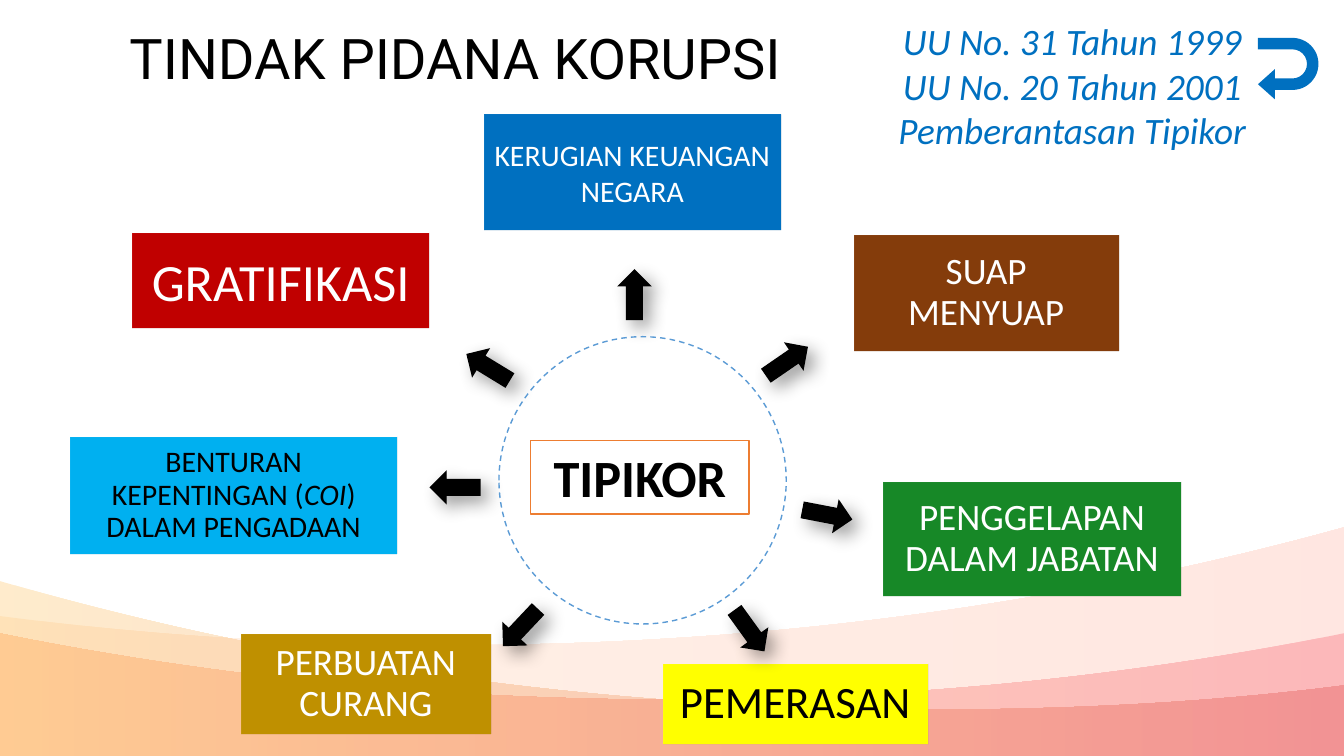
from lxml import etree
from pptx import Presentation
from pptx.dml.color import RGBColor
from pptx.enum.dml import MSO_LINE
from pptx.enum.shapes import MSO_SHAPE
from pptx.enum.text import MSO_ANCHOR, PP_ALIGN
from pptx.oxml.ns import qn
from pptx.util import Pt

BEVEL, UP_ARROW = MSO_SHAPE.BEVEL, MSO_SHAPE.UP_ARROW
OVAL, RECTANGLE, U_TURN = MSO_SHAPE.OVAL, MSO_SHAPE.RECTANGLE, MSO_SHAPE.U_TURN_ARROW
MIDDLE, TOP, CENTER = MSO_ANCHOR.MIDDLE, MSO_ANCHOR.TOP, PP_ALIGN.CENTER
DASH = MSO_LINE.DASH

BLACK = RGBColor(0x00, 0x00, 0x00)
WHITE = RGBColor(0xFF, 0xFF, 0xFF)
BLUE = RGBColor(0x00, 0x70, 0xC0)
RED = RGBColor(0xC0, 0x00, 0x00)
SKY = RGBColor(0x00, 0xB0, 0xF0)
GOLD = RGBColor(0xBF, 0x90, 0x00)
YELLOW = RGBColor(0xFF, 0xFF, 0x00)
GREEN = RGBColor(0x17, 0x88, 0x27)
BROWN = RGBColor(0x84, 0x3C, 0x0B)
ORANGE = RGBColor(0xED, 0x7D, 0x31)
RING_BLUE = RGBColor(0x5B, 0x9B, 0xD5)
PEACH, CORAL = RGBColor(0xFF, 0xC4, 0x86), RGBColor(0xFF, 0x86, 0x6B)
CRIMSON, FLAME = RGBColor(0xF2, 0x01, 0x22), RGBColor(0xFF, 0x6A, 0x00)
AMBER, SCARLET = RGBColor(0xFF, 0x9F, 0x00), RGBColor(0xCC, 0x00, 0x00)

WAVES = [
    ([(-1.4, 439.9), (103.7, 453.6), (212.4, 460.8), (323.3, 460.8),
      (550.1, 460.8), (766.1, 430.6), (960.5, 376.6)], PEACH, CORAL, 0),
    ([(-1.4, 452.2), (150.5, 483.1), (311.8, 499.7), (479.5, 499.7),
      (647.3, 499.7), (809.3, 483.1), (960.5, 452.2)], CRIMSON, FLAME, 180),
    ([(-1.4, 414.7), (200.9, 473.8), (426.2, 506.9), (664.6, 506.9),
      (765.4, 506.9), (864.7, 501.8), (960.5, 489.6)], AMBER, SCARLET, 0),
]

OFFENCES = [
    ((345.6, 81.8, 212.4, 82.6), ["KERUGIAN KEUANGAN NEGARA"], 21.33, BLUE, WHITE, 1, 5),
    ((94.3, 166.3, 212.4, 68), ["GRATIFIKASI"], 37.33, RED, WHITE, 1, 5),
    ((50.1, 312.1, 233.8, 83.5), ["BENTURAN KEPENTINGAN (", "COI", ") DALAM PENGADAAN"],
     21.33, SKY, BLACK, 0.9, 10),
    ((172.1, 452.9, 178.6, 71.3), ["PERBUATAN CURANG"], 26.67, GOLD, WHITE, 0.9, 10),
    ((473.4, 474.2, 189.4, 57.4), ["PEMERASAN"], 32, YELLOW, BLACK, 0.9, 10),
    ((630.7, 344.2, 213.1, 81.7), ["PENGGELAPAN DALAM JABATAN"], 26.67, GREEN, WHITE, 0.9, 10),
    ((609.8, 167.8, 189.4, 82.8), ["SUAP MENYUAP"], 26.67, BROWN, WHITE, 0.9, 10),
]

ARROWS = [
    (-5.8, -132.5, 0), (103, -85, 55.5), (131.8, 24.5, 100.9), (76.3, 107.3, 144.2),
    (-87.1, 105.1, 223.3), (-133.9, 5, 270), (-110.2, -80.7, 301.4),
]


def add_figure(slide, preset, box, fill=None, line=None):
    """Add a flat preset shape with an optional fill and a one-point line."""
    figure = slide.shapes.add_shape(preset, *[Pt(length) for length in box])
    figure.shadow.inherit = False
    if fill is None:
        figure.fill.background()
    else:
        figure.fill.solid()
        figure.fill.fore_color.rgb = fill
    if line is None:
        figure.line.fill.background()
    else:
        figure.line.color.rgb = line
        figure.line.width = Pt(1)
    return figure


def write_text(holder, lines, size, color, font="Calibri", spacing=1,
               anchor=TOP, inset=7.2, bold=False, italic=False):
    """Write centred lines, each a list of runs whose odd members are italic."""
    frame = holder.text_frame
    frame.word_wrap = True
    frame.vertical_anchor = anchor
    frame.margin_left = frame.margin_right = Pt(inset)
    for index, pieces in enumerate(lines):
        paragraph = frame.paragraphs[0] if index == 0 else frame.add_paragraph()
        paragraph.alignment = CENTER
        paragraph.line_spacing = spacing
        for order, piece in enumerate(pieces):
            run = paragraph.add_run()
            run.text = piece
            run.font.name = font
            run.font.size = Pt(size)
            run.font.color.rgb = color
            run.font.bold = bold
            run.font.italic = italic or order % 2 == 1


def curve_crest(wave):
    """Turn the six crest segments of a wave into two cubic curves."""
    segments = list(wave._element.iter(qn("a:lnTo")))[:6]
    for first, second, third in (segments[:3], segments[3:]):
        first.tag = qn("a:cubicBezTo")
        for segment in (second, third):
            first.append(segment[0])
            segment.getparent().remove(segment)


def add_waves(slide, box):
    """Draw the translucent waves along the bottom of the box."""
    left, top, width, height = box
    for crest, first_color, last_color, angle in WAVES:
        outline = crest + [(crest[-1][0], height), (crest[0][0], height)]
        points = [(Pt(left + x), Pt(top + y)) for x, y in outline]
        builder = slide.shapes.build_freeform(*points[0])
        builder.add_line_segments(points[1:], close=True)
        wave = builder.convert_to_shape()
        curve_crest(wave)
        wave.shadow.inherit = False
        wave.line.fill.background()
        wave.fill.gradient()
        wave.fill.gradient_angle = angle
        for stop, color in zip(wave.fill.gradient_stops, (first_color, last_color)):
            stop.color.rgb = color
        for color_node in wave._element.spPr.iter(qn("a:srgbClr")):
            etree.SubElement(color_node, qn("a:alpha"), val="20000")


def add_offence(slide, box, pieces, size, fill, color, spacing, inset):
    """Place one coloured offence block."""
    block = add_figure(slide, BEVEL, box, fill)
    block.adjustments[0] = 0
    write_text(block, [pieces], size, color, spacing=spacing, anchor=MIDDLE, inset=inset)


def finish_arrow(arrow):
    """Give an arrow sharp corners and a soft shadow to the lower right."""
    properties = arrow._element.spPr
    etree.SubElement(properties.find(qn("a:ln")), qn("a:miter"), lim="800000")
    shadow = etree.SubElement(properties.find(qn("a:effectLst")), qn("a:outerShdw"),
                              blurRad=str(Pt(13)), dist=str(Pt(7)), dir="2700000",
                              algn="tl", rotWithShape="0")
    color_node = etree.SubElement(shadow, qn("a:srgbClr"), val=str(BLACK))
    etree.SubElement(color_node, qn("a:alpha"), val="40000")


def add_hub(slide, box):
    """Draw the arrows, the central label and the dashed ring of the box."""
    left, top, width, height = box
    center_x, center_y = left + width / 2, top + height / 2
    arrow_width, arrow_height = 22.3, 35.3
    for dx, dy, rotation in ARROWS:
        arrow = add_figure(slide, UP_ARROW, (
            center_x + dx - arrow_width / 2, center_y + dy - arrow_height / 2,
            arrow_width, arrow_height), BLACK, BLACK)
        arrow.rotation = rotation
        finish_arrow(arrow)
    label = add_figure(slide, RECTANGLE, (left + 22.6, top + 74.1, 156.2, 52.6), WHITE, ORANGE)
    write_text(label, [["TIPIKOR"]], 37.33, BLACK, bold=True)
    ring = add_figure(slide, OVAL, box, line=RING_BLUE)
    ring.line.dash_style = DASH


def add_title(slide, box):
    """Write the slide title in the box."""
    title = slide.shapes.add_textbox(*[Pt(length) for length in box])
    write_text(title, [["TINDAK PIDANA KORUPSI"]], 40, BLACK, font="Roboto", spacing=0.9)


def add_laws(slide, box):
    """List the laws in the box, with the return arrow at its right."""
    left, top, width, height = box
    laws = slide.shapes.add_textbox(*[Pt(length) for length in box])
    write_text(laws, [["UU No. 31 Tahun 1999"], ["UU No. 20 Tahun 2001"],
                      ["Pemberantasan Tipikor"]], 26.67, BLUE, italic=True)
    return_arrow = add_figure(slide, U_TURN, (left + width - 48.6, top + 18, 43.9, 43.2), BLUE)
    return_arrow.rotation = 90
    for index, value in enumerate((0.19, 0.25, 0.28, 0.43, 1)):
        return_arrow.adjustments[index] = value


def main():
    """Build the slide and save it."""
    deck = Presentation()
    deck.slide_width, deck.slide_height = Pt(960), Pt(540)
    slide = deck.slides.add_slide(deck.slide_layouts[6])
    add_waves(slide, (0, 0, 960, 540))
    for offence in OFFENCES:
        add_offence(slide, *offence)
    add_hub(slide, (356.4, 240.5, 205.2, 205.2))
    add_title(slide, (0, 18.7, 650.2, 62.6))
    add_laws(slide, (585.4, 9.4, 361.4, 104.4))
    deck.save("out.pptx")


if __name__ == "__main__":
    main()
